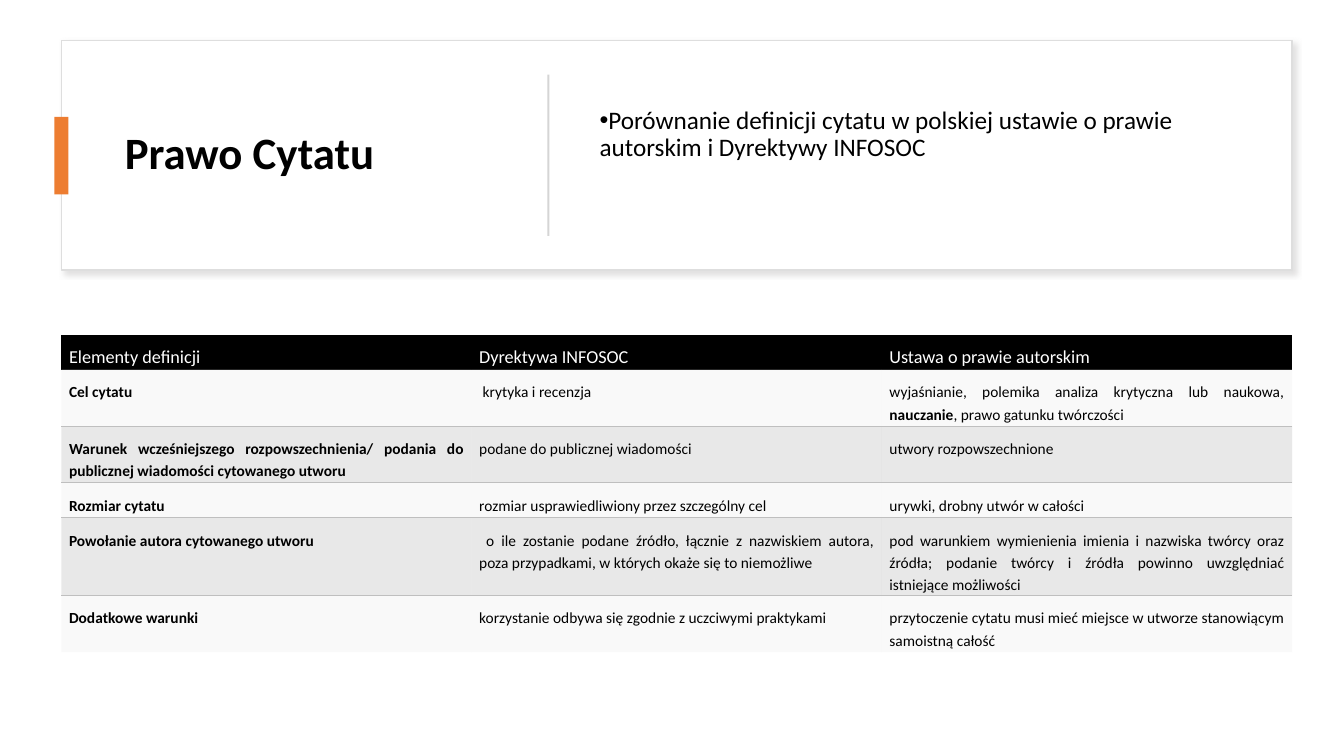
import pptx
import pptx.dml.color
import pptx.enum.shapes
import pptx.enum.text
import pptx.oxml
import pptx.oxml.ns
import pptx.util

Pt = pptx.util.Pt
ALIGN = pptx.enum.text.PP_ALIGN
ANCHOR = pptx.enum.text.MSO_ANCHOR
NAMESPACE = pptx.oxml.ns.nsdecls("a")
NO_STYLE = "{2D5ABB26-0587-4C30-8999-92F81FD0307C}"

ROWS = [
    ("Elementy definicji", "Dyrektywa INFOSOC", "Ustawa o prawie autorskim"),
    ("**Cel cytatu**", " krytyka i recenzja",
     "wyjaśnianie, polemika analiza krytyczna lub naukowa, **nauczanie**, prawo gatunku twórczości"),
    ("**Warunek wcześniejszego rozpowszechnienia/ podania do publicznej wiadomości cytowanego utworu**",
     "podane do publicznej wiadomości", "utwory rozpowszechnione"),
    ("**Rozmiar cytatu**", "rozmiar usprawiedliwiony przez szczególny cel",
     "urywki, drobny utwór w całości"),
    ("**Powołanie autora cytowanego utworu**",
     " o ile zostanie podane źródło, łącznie z nazwiskiem autora, poza przypadkami, "
     "w których okaże się to niemożliwe",
     "pod warunkiem wymienienia imienia i nazwiska twórcy oraz źródła; podanie twórcy "
     "i źródła powinno uwzględniać istniejące możliwości"),
    ("**Dodatkowe warunki**", "korzystanie odbywa się zgodnie z uczciwymi praktykami",
     "przytoczenie cytatu musi mieć miejsce w utworze stanowiącym samoistną całość"),
]
ROW_HEIGHTS = [25, 40.5, 40.5, 25, 55.5, 40.5]


def color(value):
    return pptx.dml.color.RGBColor.from_string(value)


def element(xml):
    return pptx.oxml.parse_xml(xml.replace(">", f" {NAMESPACE}>", 1))


def write(frame, text, size, ink="000000", align=ALIGN.LEFT, spacing=0.9, before=0, after=0):
    """Fill a text frame, with text between double asterisks in bold."""
    para = frame.paragraphs[0]
    para.alignment = align
    para.line_spacing = spacing
    para.space_before, para.space_after = Pt(before), Pt(after)
    for index, part in enumerate(text.split("**")):
        if part:
            span = para.add_run()
            span.text = part
            span.font.name, span.font.size = "Calibri", Pt(size)
            span.font.bold = index % 2 == 1
            span.font.color.rgb = color(ink)
    return para


class Slide:
    """Holds the page and draws each kind of element on it."""

    def __init__(self, page):
        self.page = page

    def panel(self, left, top, width, height, fill, line=None):
        kind = pptx.enum.shapes.MSO_SHAPE.RECTANGLE
        shape = self.page.shapes.add_shape(kind, Pt(left), Pt(top), Pt(width), Pt(height))
        shape.shadow.inherit = False
        shape.fill.solid()
        shape.fill.fore_color.rgb = color(fill)
        if line:
            shape.line.color.rgb = color(line)
            shape.line.width = Pt(1)
        else:
            shape.line.fill.background()
        return shape

    def shadow(self, shape, tint):
        effects = shape._element.spPr.find(pptx.oxml.ns.qn("a:effectLst"))
        effects.append(element(
            f'<a:outerShdw blurRad="{Pt(4)}" dist="{Pt(3)}" dir="2700000" algn="tl" rotWithShape="0">'
            f'<a:srgbClr val="{tint}"><a:alpha val="50000"/></a:srgbClr></a:outerShdw>'))

    def text(self, left, top, width, height, text, bottom=3.6, bullet=None, **style):
        box = self.page.shapes.add_textbox(Pt(left), Pt(top), Pt(width), Pt(height))
        frame = box.text_frame
        frame.word_wrap = True
        frame.vertical_anchor = ANCHOR.MIDDLE
        frame.margin_bottom = Pt(bottom)
        para = write(frame, text, **style)
        if bullet:
            properties = para._p.get_or_add_pPr()
            properties.set("marL", "0")
            properties.set("indent", str(-Pt(18)))
            properties.append(element('<a:buFont typeface="Arial"></a:buFont>'))
            properties.append(element(f'<a:buChar char="{bullet}"></a:buChar>'))

    def table(self, left, top, width, rows, heights):
        frame = self.page.shapes.add_table(
            len(rows), len(rows[0]), Pt(left), Pt(top), Pt(width), Pt(sum(heights)))
        table = frame.table
        table.first_row = table.horz_banding = False
        table._tbl.tblPr.find(pptx.oxml.ns.qn("a:tableStyleId")).text = NO_STYLE
        for column in table.columns:
            column.width = Pt(width / len(rows[0]))
        for index, (texts, height) in enumerate(zip(rows, heights)):
            table.rows[index].height = Pt(height)
            for place, text in enumerate(texts):
                self.cell(table.cell(index, place), text, index)

    def cell(self, cell, text, index):
        header = index == 0
        fill, alpha = ("000000", 100) if header else ("F2F2F2", 45) if index % 2 else ("BFBFBF", 35)
        cell.margin_left = cell.margin_right = Pt(5.4)
        cell.margin_top, cell.margin_bottom = Pt(7.2), Pt(0)
        cell.vertical_anchor = ANCHOR.MIDDLE if header else ANCHOR.TOP
        write(cell.text_frame, text, size=13 if header else 11,
              ink="FFFFFF" if header else "000000",
              align=ALIGN.JUSTIFY, spacing=Pt(16), after=8)
        cell.fill.solid()
        cell.fill.fore_color.rgb = color(fill)
        properties = cell._tc.get_or_add_tcPr()
        tint = properties.find(".//" + pptx.oxml.ns.qn("a:srgbClr"))
        tint.append(element(f'<a:alpha val="{alpha * 1000}"></a:alpha>'))
        if 1 <= index <= 4:
            side = "lnB" if index % 2 else "lnT"
            properties.insert(0, element(
                f'<a:{side} w="{Pt(1)}"><a:solidFill><a:srgbClr val="BFBFBF"/></a:solidFill></a:{side}>'))


def main():
    deck = pptx.Presentation()
    deck.slide_width, deck.slide_height = Pt(960), Pt(540)
    slide = Slide(deck.slides.add_slide(deck.slide_layouts[6]))
    card = slide.panel(43.9, 28.8, 879.1, 164.2, "FFFFFF", line="DEDEDE")
    slide.shadow(card, "C5C3C3")
    slide.text(82.1, 46.1, 280, 129.6, "**Prawo Cytatu**", size=32)
    slide.panel(38.9, 83.5, 10, 55.4, "ED7D31")
    slide.panel(391, 53.3, 1.4, 115.2, "D5D5D5")
    slide.text(421.2, 46.1, 472.3, 129.6,
               "Porównanie definicji cytatu w polskiej ustawie o prawie autorskim i Dyrektywy INFOSOC",
               bottom=33, bullet="•", size=18, before=10)
    slide.table(43.9, 239, 879.1, ROWS, ROW_HEIGHTS)
    deck.save("out.pptx")


if __name__ == "__main__":
    main()
